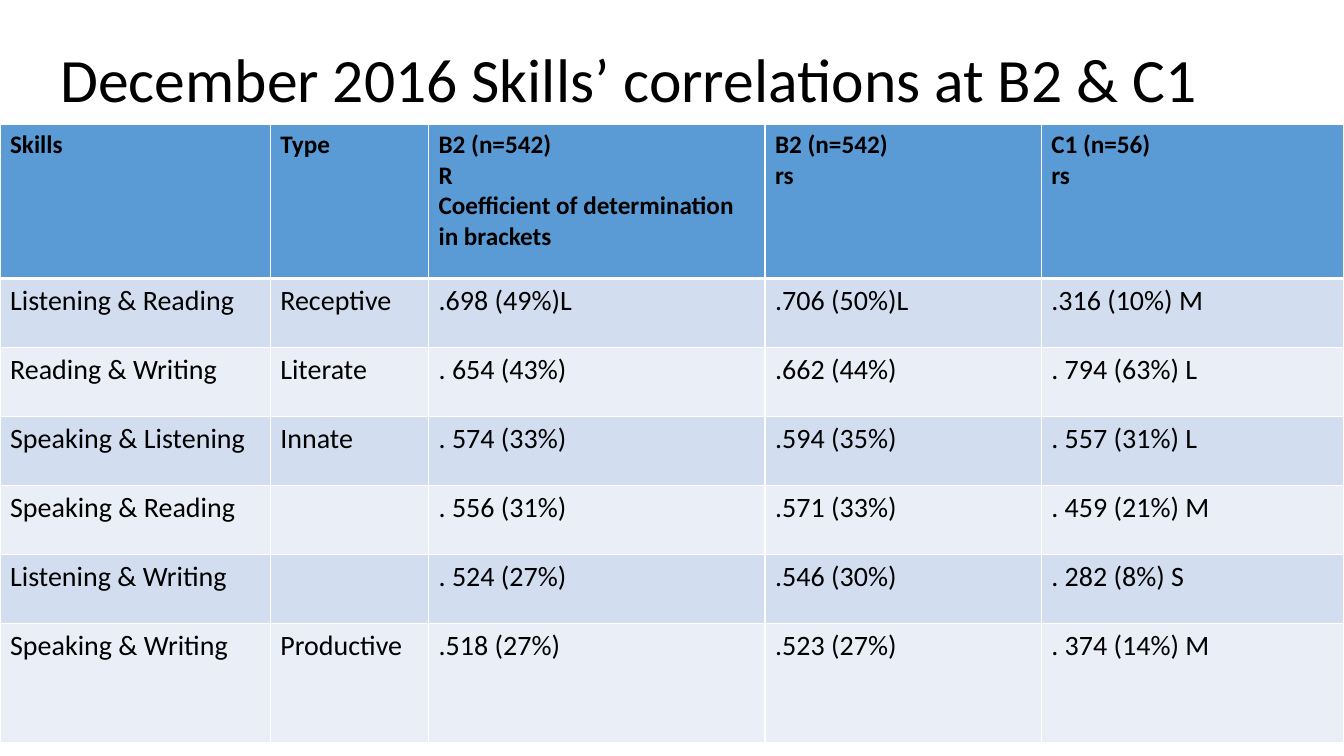
from dataclasses import dataclass

from pptx import Presentation
from pptx.dml.color import RGBColor
from pptx.enum.text import MSO_ANCHOR, MSO_AUTO_SIZE, PP_ALIGN
from pptx.oxml import parse_xml
from pptx.oxml.ns import nsdecls
from pptx.slide import Slide
from pptx.table import Table, _Cell
from pptx.text.text import _Paragraph
from pptx.util import Cm, Pt

BLACK = RGBColor(0x00, 0x00, 0x00)
WHITE = RGBColor(0xFF, 0xFF, 0xFF)
HEADER_BLUE = RGBColor(0x5B, 0x9B, 0xD5)
BAND_DARK = RGBColor(0xD2, 0xDE, 0xEF)
BAND_LIGHT = RGBColor(0xEA, 0xEF, 0xF7)
FONT = "Calibri"
COLUMN_WIDTHS = (6.81, 3.99, 8.48, 6.96, 7.63)


@dataclass(frozen=True)
class TableRow:
    texts: tuple[str, ...]
    height: float = 1.74


@dataclass(frozen=True)
class RowStyle:
    fill: RGBColor
    size: int
    bold: bool
    top_line: float = 1
    bottom_line: float = 1


HEADER = TableRow(
    (
        "Skills",
        "Type",
        "B2 (n=542)\nR\nCoefficient of determination in brackets",
        "B2 (n=542)\nrs",
        "C1 (n=56)\nrs",
    ),
    3.89,
)
CORRELATIONS = (
    TableRow(("Listening & Reading", "Receptive", ".698 (49%)L", ".706 (50%)L", ".316 (10%) M")),
    TableRow(("Reading & Writing", "Literate", ". 654 (43%)", ".662 (44%)", ". 794 (63%) L")),
    TableRow(("Speaking & Listening", "Innate", ". 574 (33%)", ".594 (35%)", ". 557 (31%) L")),
    TableRow(("Speaking & Reading", "", ". 556 (31%)", ".571 (33%)", ". 459 (21%) M")),
    TableRow(("Listening & Writing", "", ". 524 (27%)", ".546 (30%)", ". 282 (8%) S")),
    TableRow(("Speaking & Writing", "Productive", ".518 (27%)", ".523 (27%)", ". 374 (14%) M"), 3),
)


def style_paragraph(para: _Paragraph, size: int, bold: bool) -> None:
    para.alignment = PP_ALIGN.LEFT
    para.font.name = FONT
    para.font.size = Pt(size)
    para.font.bold = bold
    para.font.color.rgb = BLACK


def set_borders(cell: _Cell, style: RowStyle) -> None:
    widths = {"lnL": 1, "lnR": 1, "lnT": style.top_line, "lnB": style.bottom_line}
    properties = cell._tc.get_or_add_tcPr()
    for position, (side, width) in enumerate(widths.items()):
        line = parse_xml(
            f'<a:{side} {nsdecls("a")} w="{Pt(width)}"><a:solidFill>'
            f'<a:srgbClr val="{WHITE}"/></a:solidFill></a:{side}>'
        )
        properties.insert(position, line)


def fill_row(table: Table, index: int, row: TableRow, style: RowStyle) -> None:
    table.rows[index].height = Cm(row.height)
    for column, text in enumerate(row.texts):
        cell = table.cell(index, column)
        cell.text = text
        cell.fill.solid()
        cell.fill.fore_color.rgb = style.fill
        for para in cell.text_frame.paragraphs:
            style_paragraph(para, style.size, style.bold)
        set_borders(cell, style)


def add_title(page: Slide, text: str) -> None:
    title = page.shapes.title
    title.left, title.top, title.width, title.height = Cm(1.27), Cm(1.02), Cm(30.28), Cm(2.11)
    frame = title.text_frame
    frame.text = text
    frame.word_wrap = True
    frame.auto_size = MSO_AUTO_SIZE.NONE
    frame.vertical_anchor = MSO_ANCHOR.MIDDLE
    para = frame.paragraphs[0]
    style_paragraph(para, 44, False)
    para.line_spacing = 0.9


def add_correlation_table(page: Slide) -> None:
    rows = (HEADER, *CORRELATIONS)
    height = sum(row.height for row in rows)
    frame = page.shapes.add_table(
        len(rows), len(COLUMN_WIDTHS), Cm(0), Cm(3.13), Cm(sum(COLUMN_WIDTHS)), Cm(height)
    )
    table = frame.table
    for column, width in zip(table.columns, COLUMN_WIDTHS):
        column.width = Cm(width)
    fill_row(table, 0, HEADER, RowStyle(HEADER_BLUE, 18, True, bottom_line=3))
    for index, row in enumerate(CORRELATIONS, start=1):
        band = BAND_DARK if index % 2 else BAND_LIGHT
        top_line = 3 if index == 1 else 1
        fill_row(table, index, row, RowStyle(band, 20, False, top_line))


def main() -> None:
    deck = Presentation()
    deck.slide_width, deck.slide_height = Cm(33.87), Cm(19.05)
    page = deck.slides.add_slide(deck.slide_layouts.get_by_name("Title Only"))
    add_title(page, "December 2016 Skills’ correlations at B2 & C1")
    add_correlation_table(page)
    deck.save("out.pptx")


if __name__ == "__main__":
    main()
